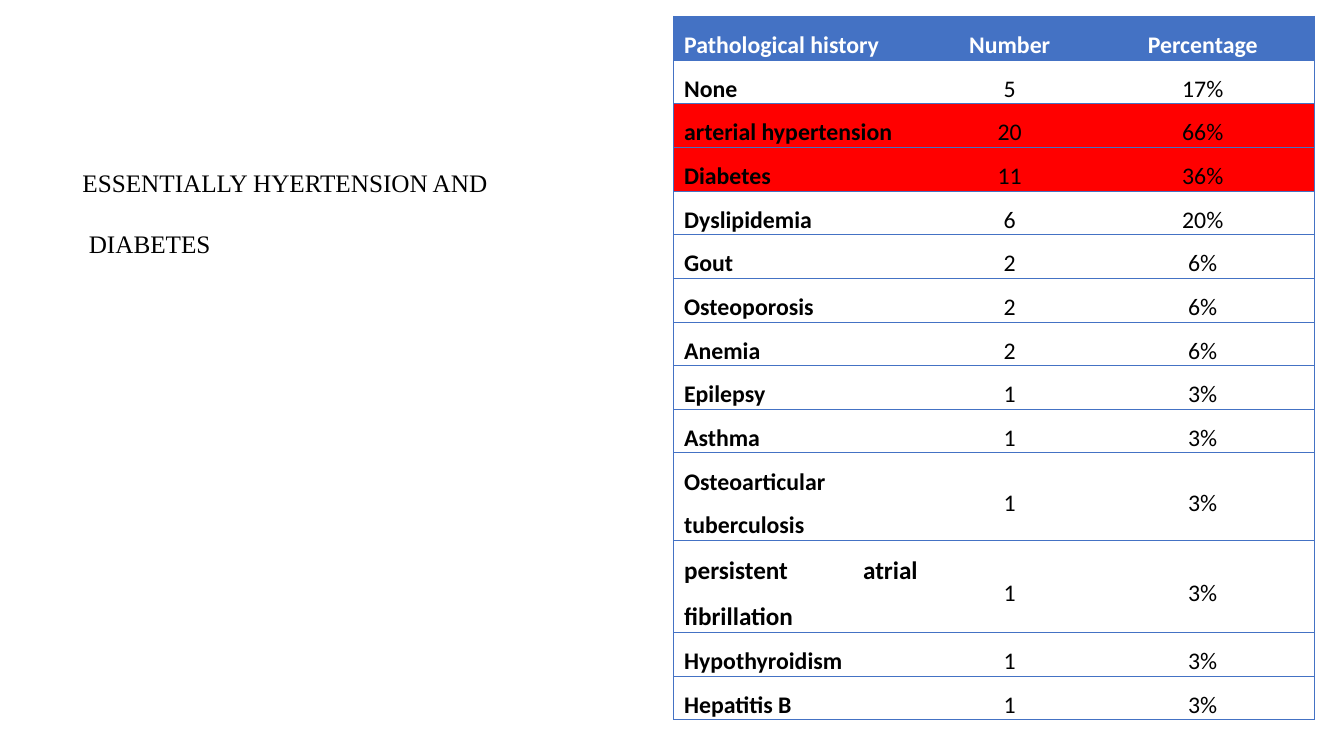
from dataclasses import dataclass
from typing import Any

from lxml.etree import SubElement
from pptx import Presentation
from pptx.dml.color import RGBColor
from pptx.enum.text import MSO_ANCHOR, MSO_AUTO_SIZE, PP_ALIGN
from pptx.oxml.ns import qn
from pptx.util import Cm, Pt

COLORS = {"blue": "4472C4", "red": "FF0000", "white": "FFFFFF", "black": "000000"}
HEADINGS = ("Pathological history", "Number", "Percentage")
HISTORY = [
    ("None", "5", "17%"),
    ("arterial hypertension", "20", "66%"),
    ("Diabetes", "11", "36%"),
    ("Dyslipidemia", "6", "20%"),
    ("Gout ", "2", "6%"),
    ("Osteoporosis", "2", "6%"),
    ("Anemia", "2", "6%"),
    ("Epilepsy", "1", "3%"),
    ("Asthma", "1", "3%"),
    ("Osteoarticular tuberculosis", "1", "3%"),
    ("persistent atrial fibrillation", "1", "3%"),
    ("Hypothyroidism", "1", "3%"),
    ("Hepatitis B", "1", "3%"),
]
HIGHLIGHTED = {"arterial hypertension", "Diabetes"}
LARGER = {"persistent atrial fibrillation"}
COLUMN_WIDTHS = (6.43, 4.09, 5.64)
ROW_HEIGHT = 0.74


@dataclass
class HistorySlide:
    """Holds the slide and its style, and adds the elements to it."""

    page: Any
    body_font: str = "Calibri"
    note_font: str = "Times New Roman"
    body_size: float = 17
    note_size: float = 18

    def add_span(self, para, text, font, size, color="black", bold=False):
        """Add one formatted run to a paragraph."""
        span = para.add_run()
        span.text = text
        span.font.name = font
        span.font.size = Pt(size)
        span.font.bold = bold
        span.font.color.rgb = RGBColor.from_string(COLORS[color])

    def add_note(self, lines, left, top, width, height, gap):
        """Add a text box with one paragraph per line."""
        box = self.page.shapes.add_textbox(Cm(left), Cm(top), Cm(width), Cm(height))
        frame = box.text_frame
        frame.word_wrap = True
        frame.auto_size = MSO_AUTO_SIZE.SHAPE_TO_FIT_TEXT
        for index, line in enumerate(lines):
            para = frame.add_paragraph() if index else frame.paragraphs[0]
            para.space_before = Pt(gap if index else 0)
            self.add_span(para, line, self.note_font, self.note_size)

    def set_borders(self, cell, visible):
        """Draw the named sides of a cell in blue and hide the others."""
        properties = cell._tc.get_or_add_tcPr()
        for side in "LRTB":
            line = SubElement(properties, qn(f"a:ln{side}"), w=str(Pt(0.5)))
            if side in visible:
                fill = SubElement(line, qn("a:solidFill"))
                SubElement(fill, qn("a:srgbClr"), val=COLORS["blue"])
            else:
                SubElement(line, qn("a:noFill"))

    def fill_cell(self, cell, text, column, color, fill, bold, size):
        """Write and format one table cell."""
        sides = {0: "LTB", len(HEADINGS) - 1: "RTB"}
        self.set_borders(cell, sides.get(column, "TB"))
        cell.fill.solid()
        cell.fill.fore_color.rgb = RGBColor.from_string(COLORS[fill])
        cell.vertical_anchor = MSO_ANCHOR.MIDDLE
        cell.margin_left = cell.margin_right = Cm(0.27)
        cell.margin_top = cell.margin_bottom = Cm(0)
        para = cell.text_frame.paragraphs[0]
        para.alignment = PP_ALIGN.CENTER if column else PP_ALIGN.JUSTIFY
        para.line_spacing = 1.5
        para.space_before = para.space_after = Pt(6)
        self.add_span(para, text, self.body_font, size, color, bold)

    def add_history(self, rows, left, top):
        """Add the table with a blue heading row and red highlighted rows."""
        frame = self.page.shapes.add_table(
            len(rows), len(COLUMN_WIDTHS), Cm(left), Cm(top),
            Cm(sum(COLUMN_WIDTHS)), Cm(ROW_HEIGHT * len(rows)))
        table = frame.table
        table.first_row = table.horz_banding = False
        for column, width in zip(table.columns, COLUMN_WIDTHS):
            column.width = Cm(width)
        for row_index, row in enumerate(rows):
            table.rows[row_index].height = Cm(ROW_HEIGHT)
            heading = row_index == 0
            fill = "blue" if heading else "red" if row[0] in HIGHLIGHTED else "white"
            color = "white" if heading else "black"
            for column, text in enumerate(row):
                size = self.note_size if text in LARGER else self.body_size
                self.fill_cell(table.cell(row_index, column), text, column,
                               color, fill, heading or column == 0, size)


def main():
    """Build and save the deck."""
    deck = Presentation()
    deck.slide_width, deck.slide_height = Cm(33.87), Cm(19.05)
    slide = HistorySlide(deck.slides.add_slide(deck.slide_layouts[6]))
    slide.add_history([HEADINGS, *HISTORY], 16.97, 0.41)
    slide.add_note(("ESSENTIALLY HYERTENSION AND", " DIABETES"),
                   1.83, 4.09, 12.12, 2.57, gap=22)
    deck.save("out.pptx")


if __name__ == "__main__":
    main()
